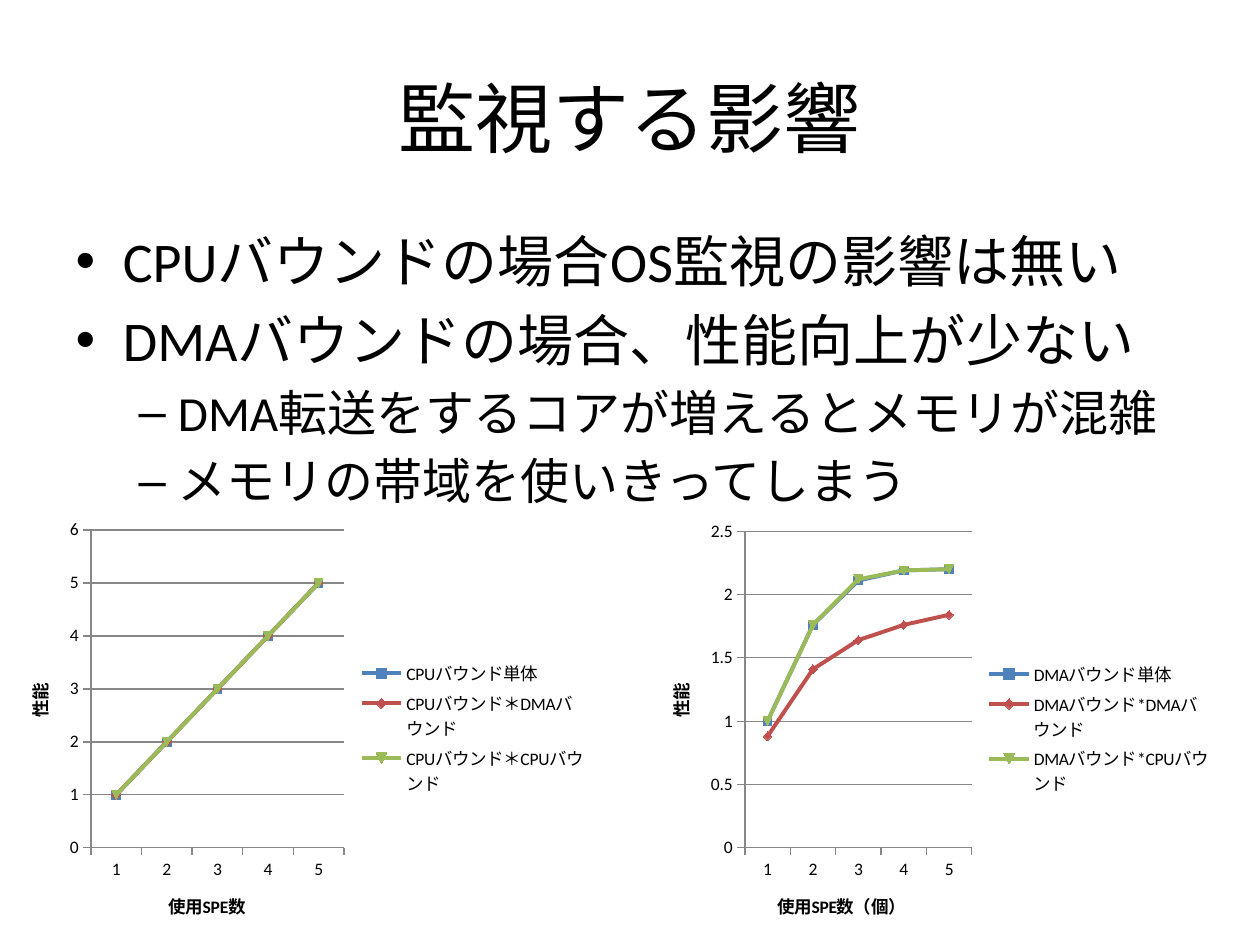
import pptx
import pptx.chart.data
import pptx.dml.color
import pptx.enum.chart
import pptx.enum.text
import pptx.util
from pptx.util import Pt

COLORS = {"text": "000000", "axis": "878787",
          "alone": "4F81BD", "with_dma": "C0504D", "with_cpu": "9BBB59"}
FONT = "Calibri"


def rgb(name):
    return pptx.dml.color.RGBColor.from_string(COLORS[name])


def write(paragraph, text, size, bold=False, level=0, align=None):
    paragraph.level = level
    paragraph.alignment = align
    run = paragraph.add_run()
    run.text = text
    run.font.name = FONT
    run.font.size = Pt(size)
    run.font.bold = bold
    run.font.color.rgb = rgb("text")


presentation = pptx.Presentation()
presentation.slide_width, presentation.slide_height = Pt(720), Pt(540)
slide = presentation.slides.add_slide(presentation.slide_layouts[1])

# Title
heading = slide.shapes.title
heading.left, heading.top, heading.width, heading.height = Pt(36), Pt(21.6), Pt(648), Pt(90)
heading.text_frame.vertical_anchor = pptx.enum.text.MSO_ANCHOR.MIDDLE
write(heading.text_frame.paragraphs[0], "監視する影響", size=44,
      align=pptx.enum.text.PP_ALIGN.CENTER)

# Findings
findings = slide.placeholders[1]
findings.left, findings.top, findings.width, findings.height = Pt(36), Pt(126), Pt(648), Pt(356.4)
points = [
    ("CPUバウンドの場合OS監視の影響は無い", 0),
    ("DMAバウンドの場合、性能向上が少ない", 0),
    ("DMA転送をするコアが増えるとメモリが混雑", 1),
    ("メモリの帯域を使いきってしまう", 1),
]
for index, (point, level) in enumerate(points):
    frame = findings.text_frame
    paragraph = frame.paragraphs[0] if index == 0 else frame.add_paragraph()
    write(paragraph, point, size=28 if level else 32, level=level)

# Performance charts: box, category title, series
linear = [1, 2, 3, 4, 5]
performance = [
    ((366.5, 293, 333.4, 247), "使用SPE数（個）", [
        ("DMAバウンド単体", [1, 1.76, 2.11, 2.19, 2.2]),
        ("DMAバウンド*DMAバウンド", [0.88, 1.41, 1.64, 1.76, 1.84]),
        ("DMAバウンド*CPUバウンド", [1, 1.76, 2.12, 2.19, 2.2])]),
    ((0, 292.3, 342.7, 247.7), "使用SPE数", [
        ("CPUバウンド単体", linear),
        ("CPUバウンド＊DMAバウンド", linear),
        ("CPUバウンド＊CPUバウンド", linear)]),
]
for box, spe_title, measurements in performance:
    data = pptx.chart.data.CategoryChartData()
    data.categories = ["1", "2", "3", "4", "5"]
    for name, values in measurements:
        data.add_series(name, values)
    chart = slide.shapes.add_chart(pptx.enum.chart.XL_CHART_TYPE.LINE_MARKERS,
                                   *map(Pt, box), data).chart
    chart.has_title = False
    chart.font.name = FONT
    chart.font.size = Pt(10)
    chart.font.color.rgb = rgb("text")
    chart.has_legend = True
    chart.legend.position = pptx.enum.chart.XL_LEGEND_POSITION.RIGHT
    chart.legend.include_in_layout = False
    chart.plots[0].vary_by_categories = False

    # Axes
    for axis, axis_title in ((chart.category_axis, spe_title), (chart.value_axis, "性能")):
        write(axis.axis_title.text_frame.paragraphs[0], axis_title, size=10, bold=True)
        axis.major_tick_mark = pptx.enum.chart.XL_TICK_MARK.OUTSIDE
        axis.minor_tick_mark = pptx.enum.chart.XL_TICK_MARK.NONE
        axis.format.line.color.rgb = rgb("axis")
        axis.format.line.width = Pt(0.75)
    chart.value_axis.has_major_gridlines = True
    gridline = chart.value_axis.major_gridlines.format.line
    gridline.color.rgb = rgb("axis")
    gridline.width = Pt(0.75)

    # Series lines and markers
    for series, color in zip(chart.plots[0].series, ("alone", "with_dma", "with_cpu")):
        series.smooth = False
        series.format.line.color.rgb = rgb(color)
        series.format.line.width = Pt(2.25)
        series.marker.format.fill.solid()
        series.marker.format.fill.fore_color.rgb = rgb(color)
        series.marker.format.line.color.rgb = rgb(color)

presentation.save("out.pptx")
